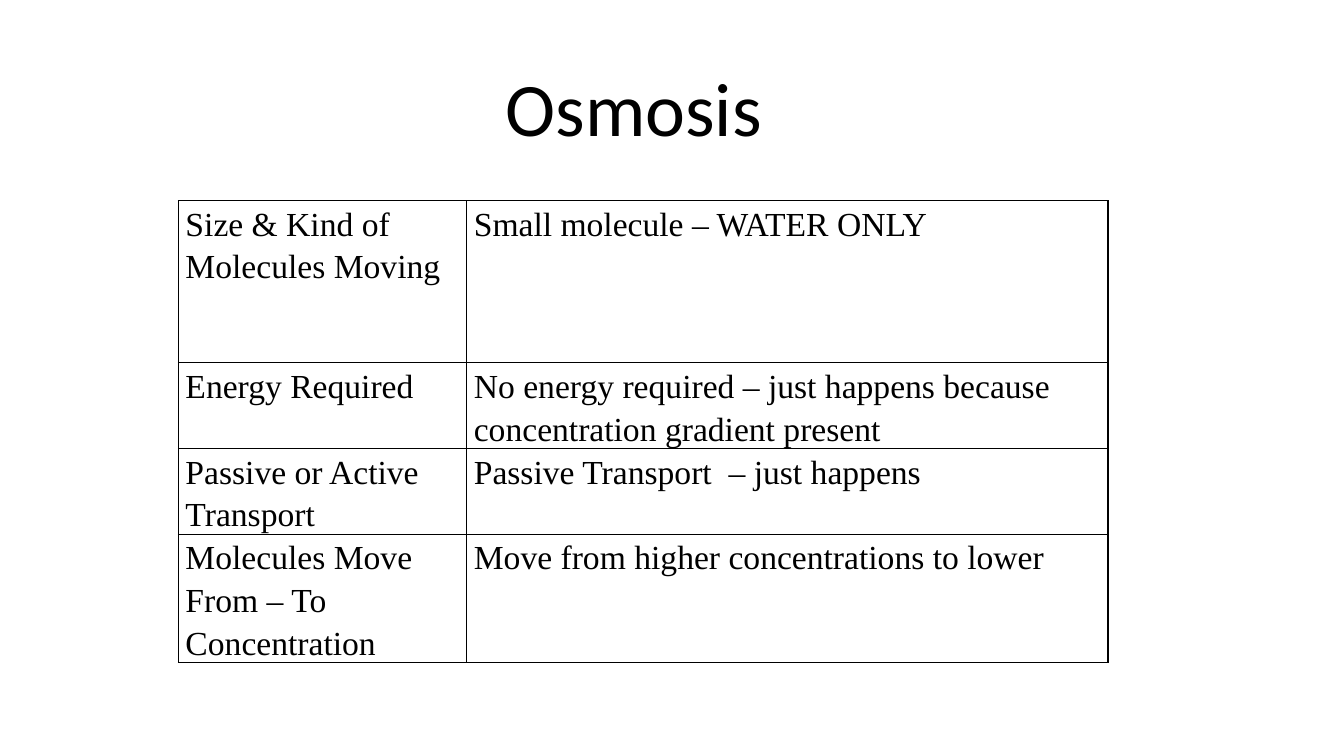
from lxml.etree import SubElement
from pptx import Presentation
from pptx.dml.color import RGBColor
from pptx.enum.text import MSO_AUTO_SIZE, PP_ALIGN
from pptx.oxml.ns import qn
from pptx.util import Inches, Pt

TRANSPORT_FACTS = [
    (["Size & Kind of", "Molecules Moving"], ["Small molecule – WATER ONLY"]),
    (["Energy Required"],
     ["No energy required – just happens because concentration gradient present"]),
    (["Passive or Active", "Transport"], ["Passive Transport  – just happens"]),
    (["Molecules Move", "From – To", "Concentration"],
     ["Move from higher concentrations to lower"]),
]


class Page:
    colours = {"ink": "000000", "paper": "FFFFFF"}
    title_font = "Calibri"
    table_font = "Times New Roman"

    def __init__(self, deck):
        self.slide = deck.slides.add_slide(deck.slide_layouts[6])
        fill = self.slide.background.fill
        fill.solid()
        fill.fore_color.rgb = RGBColor.from_string(self.colours["paper"])

    def style(self, paragraph, name, size):
        paragraph.font.name = name
        paragraph.font.size = Pt(size)
        paragraph.font.color.rgb = RGBColor.from_string(self.colours["ink"])

    def title(self, text, left, top, width, height):
        box = self.slide.shapes.add_textbox(
            Inches(left), Inches(top), Inches(width), Inches(height))
        frame = box.text_frame
        frame.word_wrap = False
        frame.auto_size = MSO_AUTO_SIZE.SHAPE_TO_FIT_TEXT
        paragraph = frame.paragraphs[0]
        paragraph.text = text
        paragraph.alignment = PP_ALIGN.CENTER
        self.style(paragraph, self.title_font, 54)

    def table(self, facts, left, top, widths, heights):
        table = self.slide.shapes.add_table(
            len(heights), len(widths), Inches(left), Inches(top),
            Inches(sum(widths)), Inches(sum(heights))).table
        table.first_row = table.horz_banding = False
        for column, width in zip(table.columns, widths):
            column.width = Inches(width)
        for row, height, fact in zip(table.rows, heights, facts):
            row.height = Inches(height)
            for cell, lines in zip(row.cells, fact):
                self.fill_cell(cell, lines)

    def fill_cell(self, cell, lines):
        cell.margin_left = cell.margin_right = Inches(0.07)
        cell.margin_top = cell.margin_bottom = 0
        cell.text = "\n".join(lines)
        for paragraph in cell.text_frame.paragraphs:
            paragraph.line_spacing = 1.15
            self.style(paragraph, self.table_font, 24)
        self.border(cell)
        cell.fill.background()

    def border(self, cell):
        properties = cell._tc.get_or_add_tcPr()
        for side in ("a:lnL", "a:lnR", "a:lnT", "a:lnB"):
            line = SubElement(properties, qn(side), w=str(Pt(1)))
            solid = SubElement(line, qn("a:solidFill"))
            SubElement(solid, qn("a:srgbClr"), val=self.colours["ink"])


def main():
    deck = Presentation()
    deck.slide_width = Inches(13.33)
    deck.slide_height = Inches(7.5)
    page = Page(deck)
    page.table(TRANSPORT_FACTS, 1.77, 1.99, [2.86, 6.36], [1.61, 0.85, 0.85, 1.27])
    page.title("Osmosis", 4.9, 0.55, 2.77, 1.01)
    deck.save("out.pptx")


if __name__ == "__main__":
    main()
